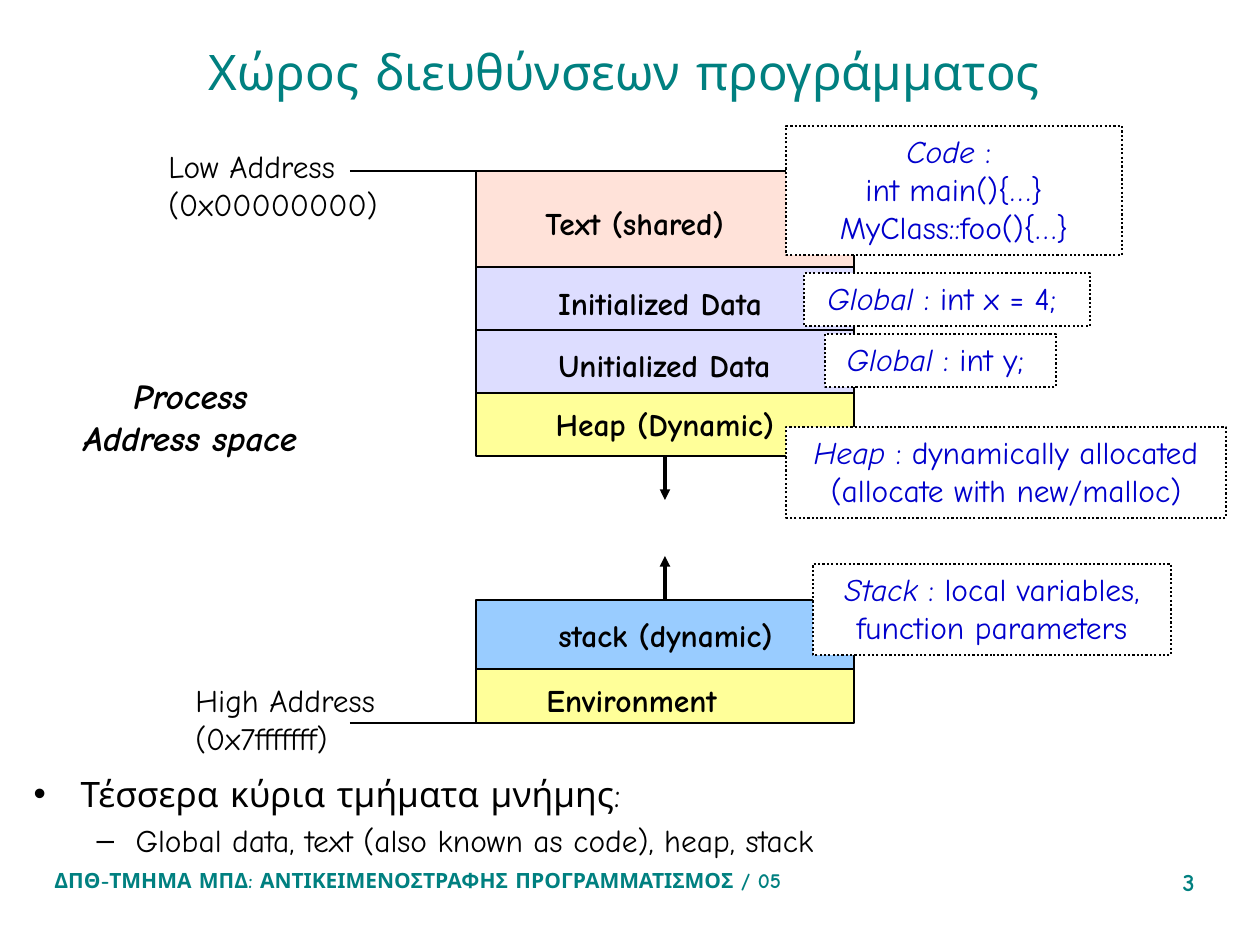
import dataclasses

import pptx
import pptx.dml.color
import pptx.enum.dml
import pptx.enum.shapes
import pptx.enum.text
import pptx.oxml
import pptx.oxml.ns
import pptx.util

PX = 914400 / 126
ALIGN = pptx.enum.text.PP_ALIGN
ANCHOR = pptx.enum.text.MSO_ANCHOR
AUTO_SIZE = pptx.enum.text.MSO_AUTO_SIZE
CONNECTOR = pptx.enum.shapes.MSO_CONNECTOR
RECTANGLE = pptx.enum.shapes.MSO_SHAPE.RECTANGLE


@dataclasses.dataclass(frozen=True)
class Theme:
    """Colours, font and type sizes of the slide."""
    font: str = "Comic Neue"
    teal: str = "008080"
    black: str = "000000"
    white: str = "FFFFFF"
    blue: str = "0000CC"
    rose: str = "FFE2D9"
    lilac: str = "DDDDFF"
    yellow: str = "FFFF99"
    sky: str = "99CCFF"
    title: int = 28
    heading: int = 20
    text: int = 18
    number: int = 14
    footer: int = 12


THEME = Theme()
BLOCK_LEFT, BLOCK_WIDTH = 476, 378
BLOCK_MIDDLE = BLOCK_LEFT + BLOCK_WIDTH // 2

BLOCKS = {
    "Text (shared)": (171, 96, THEME.rose, (533, 198, 238), ALIGN.LEFT),
    "Initialized Data": (267, 63, THEME.lilac, (527, 278, 266), ALIGN.CENTER),
    "Unitialized Data": (330, 63, THEME.lilac, (529, 340, 271), ALIGN.CENTER),
    "Heap (Dynamic)": (393, 63, THEME.yellow, (534, 399, 262), ALIGN.CENTER),
    "stack (dynamic)": (600, 69, THEME.sky, (546, 610, 262), ALIGN.LEFT),
    "Environment": (669, 54, THEME.yellow, (534, 675, 207), ALIGN.LEFT),
}

CALLOUTS = [
    ((813, 564, 358, 91), "Stack ", [": local variables,", "function parameters"]),
    ((786, 427, 440, 91), "Heap ", [": dynamically allocated", "(allocate with new/malloc)"]),
    ((804, 273, 286, 53), "Global ", [": int x = 4; "]),
    ((825, 334, 231, 53), "Global ", [": int y; "]),
    ((786, 126, 336, 129), "Code ", [": ", "int main(){…}", "MyClass::foo(){…}"]),
]


def px(*lengths):
    """Turn whole pixels into EMU."""
    return [pptx.util.Emu(round(length * PX)) for length in lengths]


def rgb(colour):
    """Make a colour from its hex code."""
    return pptx.dml.color.RGBColor.from_string(colour)


def apply_format(target, values):
    """Set each attribute named in the dict."""
    for name, value in values.items():
        setattr(target, name, value)


def add_run(paragraph, text, size, colour, bold=False, italic=False):
    """Add one formatted run to a paragraph."""
    run = paragraph.add_run()
    run.text = text
    apply_format(run.font, {"name": THEME.font, "size": pptx.util.Pt(size),
                            "bold": bold, "italic": italic})
    run.font.color.rgb = rgb(colour)


def next_paragraph(frame, index):
    """Return the first paragraph or a new one after it."""
    return frame.add_paragraph() if index else frame.paragraphs[0]


def add_text(slide, box, lines, size, colour=THEME.black, align=ALIGN.LEFT,
             wrap=False, **style):
    """Add a text box with one paragraph for each line."""
    frame = slide.shapes.add_textbox(*px(*box)).text_frame
    apply_format(frame, {
        "word_wrap": wrap,
        "auto_size": AUTO_SIZE.NONE if wrap else AUTO_SIZE.SHAPE_TO_FIT_TEXT})
    for index, line in enumerate(lines):
        paragraph = next_paragraph(frame, index)
        paragraph.alignment = align
        add_run(paragraph, line, size, colour, **style)


def add_rectangle(slide, box, fill, width=1):
    """Add a filled rectangle with a black outline."""
    shape = slide.shapes.add_shape(RECTANGLE, *px(*box))
    shape.shadow.inherit = False
    shape.fill.solid()
    shape.fill.fore_color.rgb = rgb(fill)
    shape.line.color.rgb = rgb(THEME.black)
    shape.line.width = pptx.util.Pt(width)
    return shape


def add_block(slide, label):
    """Add one memory segment and its label."""
    top, height, fill, (left, label_top, width), align = BLOCKS[label]
    shape = add_rectangle(slide, (BLOCK_LEFT, top, BLOCK_WIDTH, height), fill)
    add_text(slide, (left, label_top, width, 50), [label], THEME.text,
             align=align, bold=True)
    return shape


def add_callout(slide, box, term, lines):
    """Add a dotted box that opens with an italic term."""
    shape = add_rectangle(slide, box, THEME.white, 1.25)
    shape.line.dash_style = pptx.enum.dml.MSO_LINE.ROUND_DOT
    frame = shape.text_frame
    apply_format(frame, {"word_wrap": False, "vertical_anchor": ANCHOR.TOP,
                         "auto_size": AUTO_SIZE.SHAPE_TO_FIT_TEXT})
    for index, line in enumerate(lines):
        paragraph = next_paragraph(frame, index)
        paragraph.alignment = ALIGN.CENTER
        if index == 0:
            add_run(paragraph, term, THEME.text, THEME.blue, italic=True)
        add_run(paragraph, line, THEME.text, THEME.blue)


def add_line(slide, ends, width=1):
    """Add a plain black straight line."""
    line = slide.shapes.add_connector(CONNECTOR.STRAIGHT, *px(*ends))
    line.line.color.rgb = rgb(THEME.black)
    line.line.width = pptx.util.Pt(width)
    pptx.oxml.ns.qn("a:effectLst")
    line._element.spPr.append(pptx.oxml.parse_xml(
        f"<a:effectLst {pptx.oxml.ns.nsdecls('a')}/>"))
    return line


def add_arrow(slide, block, site, start, end):
    """Add a growth arrow joined to a memory segment."""
    arrow = add_line(slide, (BLOCK_MIDDLE, start, BLOCK_MIDDLE, end), 2)
    arrow.begin_connect(block, site)
    arrow.line._get_or_add_ln().append(pptx.oxml.parse_xml(
        f"<a:tailEnd {pptx.oxml.ns.nsdecls('a')} type='triangle'/>"))


def place(placeholder, box, anchor):
    """Move a placeholder and return its text frame."""
    apply_format(placeholder, dict(zip(("left", "top", "width", "height"), px(*box))))
    apply_format(placeholder.text_frame, {"vertical_anchor": anchor, "word_wrap": True,
                                          "auto_size": AUTO_SIZE.NONE})
    return placeholder.text_frame


def add_bullet(frame, level, text, size, bullet, margin, hanging, space):
    """Write one list paragraph with its own bullet and indent."""
    paragraph = next_paragraph(frame, level)
    paragraph.level = level
    properties = paragraph._p.get_or_add_pPr()
    for name, length in zip(("marL", "indent"), px(margin, -hanging)):
        properties.set(name, str(length))
    properties.append(pptx.oxml.parse_xml(
        f"<a:buChar {pptx.oxml.ns.nsdecls('a')} char='{bullet}'/>"))
    paragraph.space_before = pptx.util.Pt(space)
    add_run(paragraph, text, size, THEME.black)


def main():
    """Build the address space slide."""
    presentation = pptx.Presentation()
    apply_format(presentation, dict(zip(("slide_width", "slide_height"), px(1260, 945))))
    slide = presentation.slides.add_slide(presentation.slide_layouts[1])

    title = place(slide.shapes.title, (42, 42, 1165, 58), ANCHOR.MIDDLE).paragraphs[0]
    title.alignment = ALIGN.CENTER
    add_run(title, "Χώρος διευθύνσεων προγράμματος", THEME.title, THEME.teal)
    body = place(slide.placeholders[1], (21, 766, 1207, 126), ANCHOR.TOP)
    add_bullet(body, 0, "Τέσσερα κύρια τμήματα μνήμης:", THEME.heading, "•", 47, 47, 0)
    add_bullet(body, 1, "Global data, text (also known as code), heap, stack",
               THEME.text, "–", 102, 39, 3.6)

    add_text(slide, (42, 861, 976, 63),
             ["ΔΠΘ-ΤΜΗΜΑ ΜΠΔ: ΑΝΤΙΚΕΙΜΕΝΟΣΤΡΑΦΗΣ ΠΡΟΓΡΑΜΜΑΤΙΣΜΟΣ / 05"],
             THEME.footer, THEME.teal, wrap=True, bold=True)
    add_text(slide, (1050, 861, 157, 63), ["3"], THEME.number, THEME.teal,
             ALIGN.RIGHT, wrap=True, bold=True)

    for height in (723, 171):
        add_line(slide, (350, height, BLOCK_LEFT + BLOCK_WIDTH, height))
    add_text(slide, (55, 368, 271, 97), ["Process", "Address space"], THEME.heading,
             align=ALIGN.CENTER, bold=True, italic=True)
    add_text(slide, (156, 141, 241, 88), ["Low Address", "(0x00000000)"], THEME.text)
    add_text(slide, (183, 675, 226, 88), ["High Address", "(0x7fffffff)"], THEME.text)

    blocks = {label: add_block(slide, label) for label in BLOCKS}
    add_arrow(slide, blocks["Heap (Dynamic)"], 2, 456, 500)
    add_arrow(slide, blocks["stack (dynamic)"], 0, 600, 556)
    for box, term, lines in CALLOUTS:
        add_callout(slide, box, term, lines)

    presentation.save("out.pptx")


if __name__ == "__main__":
    main()
